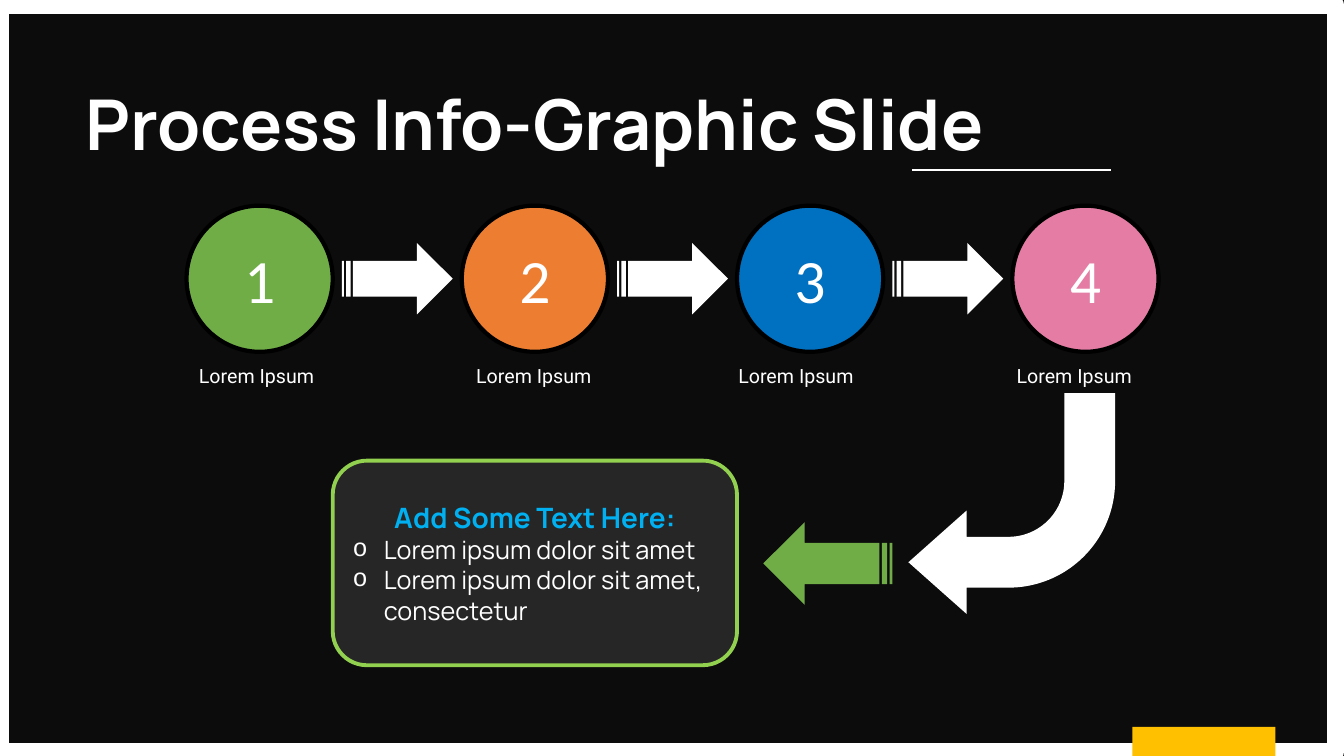
from lxml.etree import SubElement
from pptx import Presentation
from pptx.dml.color import RGBColor
from pptx.enum.shapes import MSO_CONNECTOR, MSO_SHAPE
from pptx.enum.text import MSO_ANCHOR, PP_ALIGN
from pptx.oxml.ns import qn
from pptx.util import Emu, Pt

PX = 9144  # 100 px to the inch
COLORS = {
    "background": "0C0C0C",
    "white": "FFFFFF",
    "black": "000000",
    "gold": "FFC000",
    "green": "70AD47",
    "orange": "ED7D31",
    "blue": "0070C0",
    "pink": "E47CA4",
    "panel": "262626",
    "lime": "92D050",
    "sky": "00B0F0",
}
# number, circle colour, label shift from the circle's left edge
STEPS = [
    ("1", "green", -14),
    ("2", "orange", -12),
    ("3", "blue", -25),
    ("4", "pink", -22),
]
DETAILS = ["Lorem ipsum dolor sit amet", "Lorem ipsum dolor sit amet, consectetur"]


def px(*lengths):
    return [Emu(length * PX) for length in lengths]


def color(name):
    return RGBColor.from_string(COLORS[name])


def add_block(slide, kind, box, fill=None, line=None, width=0, adjustments=(), rotation=0):
    """Add a flat preset shape; without fill or line that part is left clear."""
    block = slide.shapes.add_shape(kind, *px(*box))
    block.shadow.inherit = False
    block.rotation = rotation
    for index, value in enumerate(adjustments):
        block.adjustments[index] = value
    if fill:
        block.fill.solid()
        block.fill.fore_color.rgb = color(fill)
    else:
        block.fill.background()
    if line:
        block.line.color.rgb = color(line)
        block.line.width = Pt(width)
    else:
        block.line.fill.background()
    return block


def write(paragraph, text, font, size, ink="white", bold=False, align=PP_ALIGN.CENTER):
    paragraph.text = text
    paragraph.alignment = align
    paragraph.font.name = font
    paragraph.font.size = Pt(size)
    paragraph.font.bold = bold
    paragraph.font.color.rgb = color(ink)


def add_bullet(paragraph):
    properties = paragraph._p.get_or_add_pPr()
    indent = 31 * PX
    properties.set("marL", str(indent))
    properties.set("indent", str(-indent))
    bullet_color = SubElement(properties, qn("a:buClr"))
    SubElement(bullet_color, qn("a:srgbClr"), val=COLORS["white"])
    SubElement(properties, qn("a:buFont"), typeface="Courier New")
    SubElement(properties, qn("a:buChar"), char="o")
    # Default run properties come after the bullet in the schema
    defaults = properties.find(qn("a:defRPr"))
    if defaults is not None:
        properties.append(defaults)


def add_text(slide, box, text, font, size, bold=False):
    frame = slide.shapes.add_textbox(*px(*box)).text_frame
    frame.word_wrap = True
    write(frame.paragraphs[0], text, font, size, bold=bold)


def add_backdrop(slide, box):
    slide.background.fill.solid()
    slide.background.fill.fore_color.rgb = color("background")
    add_block(slide, MSO_SHAPE.RECTANGLE, box, line="white", width=12.25)
    left, top, _, _ = box
    add_block(slide, MSO_SHAPE.RECTANGLE, (left + 1123, top + 716, 142, 29), fill="gold")


def add_title(slide, box):
    add_text(slide, box, "Process Info-Graphic Slide", "Manrope", 50, bold=True)
    left, top, _, height = box
    base = top + height
    underline = slide.shapes.add_connector(
        MSO_CONNECTOR.STRAIGHT, *px(left + 867, base, left + 1064, base))
    underline.line.color.rgb = color("white")
    underline.line.width = Pt(1.5)
    SubElement(underline._element.spPr, qn("a:effectLst"))


def add_steps(slide, box):
    """Row of numbered circles with labels, joined by striped arrows."""
    left, top, width, _ = box
    diameter = 145
    pitch = (width - diameter) // (len(STEPS) - 1)
    for index, (number, fill, label_shift) in enumerate(STEPS):
        x = left + index * pitch
        circle = add_block(slide, MSO_SHAPE.OVAL, (x, top, diameter, diameter),
                           fill, "black", 3)
        circle.text_frame.vertical_anchor = MSO_ANCHOR.MIDDLE
        write(circle.text_frame.paragraphs[0], number, "Calibri", 44)
        add_text(slide, (x + label_shift, top + 152, 167, 34), "Lorem Ipsum", "Roboto", 14)
        if index < len(STEPS) - 1:
            add_block(slide, MSO_SHAPE.STRIPED_RIGHT_ARROW,
                      (x + 154, top + 37, 110, 71), "white")


def add_return_path(slide, box):
    """Bent arrow on the right, then a striped arrow pointing left."""
    left, top, width, height = box
    add_block(slide, MSO_SHAPE.BENT_ARROW, (left + width - 205, top, 205, height), "white",
              adjustments=(0.246, 0.25, 0.281, 0.516), rotation=180)
    add_block(slide, MSO_SHAPE.STRIPED_RIGHT_ARROW, (left, top + 128, 128, 82), "green",
              rotation=180)


def add_detail_panel(slide, box):
    panel = add_block(slide, MSO_SHAPE.ROUNDED_RECTANGLE, box, "panel", "lime", 2.75,
                      adjustments=(0.167,))
    frame = panel.text_frame
    frame.word_wrap = True
    frame.vertical_anchor = MSO_ANCHOR.MIDDLE
    write(frame.paragraphs[0], "Add Some Text Here:", "Manrope", 20, "sky", bold=True)
    for detail in DETAILS:
        item = frame.add_paragraph()
        write(item, detail, "Manrope", 18, align=PP_ALIGN.LEFT)
        add_bullet(item)


def main():
    deck = Presentation()
    deck.slide_width, deck.slide_height = px(1333, 750)
    slide = deck.slides.add_slide(deck.slide_layouts[6])
    add_backdrop(slide, (0, 5, 1325, 741))
    add_steps(slide, (185, 204, 964, 186))
    add_return_path(slide, (757, 390, 349, 219))
    add_detail_panel(slide, (330, 457, 401, 203))
    add_title(slide, (38, 75, 985, 94))
    deck.save("out.pptx")


if __name__ == "__main__":
    main()
